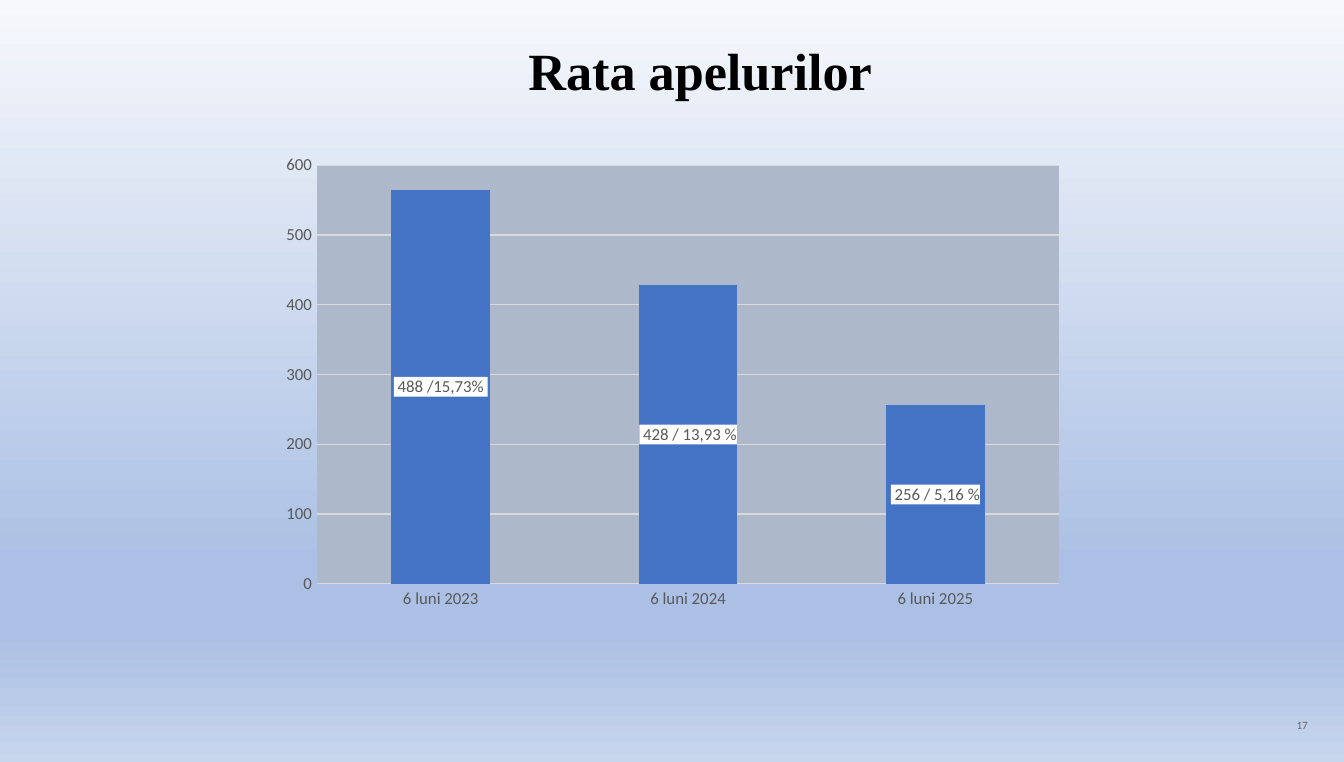
from dataclasses import dataclass

from lxml.etree import SubElement
from pptx import Presentation
from pptx.chart.data import CategoryChartData
from pptx.dml.color import RGBColor
from pptx.enum.chart import XL_CHART_TYPE as ChartType
from pptx.enum.chart import XL_LABEL_POSITION as LabelPosition
from pptx.enum.chart import XL_TICK_MARK as TickMark
from pptx.enum.text import MSO_ANCHOR as Anchor
from pptx.enum.text import PP_ALIGN as Align
from pptx.oxml import parse_xml
from pptx.oxml.ns import nsdecls, qn
from pptx.util import Inches, Pt

GRAY = "595959"
GRADIENT = [(0, "F6F8FC"), (74, "ABC0E4"), (83, "ABC0E4"), (100, "C7D5ED")]


@dataclass
class TextItem:
    text: str
    box: tuple[float, float, float, float]
    font_name: str
    size: float
    color: str
    align: Align
    anchor: Anchor
    bold: bool = False


@dataclass
class Period:
    name: str
    calls: int
    label: str


TEXTS = [
    TextItem("17", (7.5, 5.3, 2.33, 0.2), "Calibri", 6, "6C6463", Align.RIGHT, Anchor.MIDDLE),
    TextItem("Rata apelurilor", (0.96, 0.3, 8.5, 0.51), "Times New Roman", 28, "000000",
             Align.CENTER, Anchor.BOTTOM, True),
]
PERIODS = [
    Period("6 luni 2023", 565, " 488 /15,73% "),
    Period("6 luni 2024", 428, " 428 / 13,93 %"),
    Period("6 luni 2025", 256, " 256 / 5,16 %"),
]


def rgb(value: str) -> RGBColor:
    return RGBColor.from_string(value)


def style_font(font, name: str, size: float, color: str, bold: bool = False) -> None:
    font.name, font.size, font.bold = name, Pt(size), bold
    font.color.rgb = rgb(color)


def solid_properties(color: str):
    return parse_xml(
        f'<c:spPr {nsdecls("c", "a")}><a:solidFill><a:srgbClr val="{color}"/></a:solidFill>'
        '<a:ln><a:noFill/></a:ln></c:spPr>'
    )


def paint_background(slide) -> None:
    fill = slide.background.fill
    fill.gradient()
    fill.gradient_angle = 270
    stops = slide.element.find(".//" + qn("a:gsLst"))
    for stop in list(stops):
        stops.remove(stop)
    for position, color in GRADIENT:
        stop = SubElement(stops, qn("a:gs"), pos=str(position * 1000))
        SubElement(stop, qn("a:srgbClr"), val=color)


def add_text(slide, item: TextItem) -> None:
    shape = slide.shapes.add_textbox(*map(Inches, item.box))
    frame = shape.text_frame
    frame.word_wrap = True
    frame.vertical_anchor = item.anchor
    paragraph = frame.paragraphs[0]
    paragraph.text = item.text
    paragraph.alignment = item.align
    paragraph.line_spacing = 0.9
    style_font(paragraph.font, item.font_name, item.size, item.color, item.bold)


def style_axis(axis) -> None:
    axis.major_tick_mark = axis.minor_tick_mark = TickMark.NONE
    axis.format.line.fill.background()
    style_font(axis.tick_labels.font, "Calibri", 9, GRAY)


def style_plot_area(chart, color: str) -> None:
    area = chart.element.find(".//" + qn("c:plotArea"))
    for layout in area.findall(qn("c:layout")):
        area.remove(layout)
    area.insert(0, parse_xml(
        f'<c:layout {nsdecls("c")}><c:manualLayout><c:layoutTarget val="inner"/>'
        '<c:xMode val="edge"/><c:yMode val="edge"/><c:x val="0.06"/><c:y val="0.04"/>'
        '<c:w val="0.92"/><c:h val="0.89"/></c:manualLayout></c:layout>'
    ))
    area.append(solid_properties(color))


def label_point(series, index: int, text: str) -> None:
    label = series.points[index].data_label
    frame = label.text_frame
    frame.word_wrap = False
    paragraph = frame.paragraphs[0]
    paragraph.add_run().text = text
    style_font(paragraph.font, "Calibri", 9, GRAY)
    label.position = LabelPosition.CENTER
    labels = series.data_labels
    element = labels._element.findall(qn("c:dLbl"))[index]
    element.find(qn("c:tx")).addnext(solid_properties("FFFFFF"))


def add_calls_chart(slide) -> None:
    data = CategoryChartData()
    data.categories = [period.name for period in PERIODS]
    data.add_series("Series 1", [period.calls for period in PERIODS])
    box = map(Inches, (2, 1.09, 6, 3.5))
    chart = slide.shapes.add_chart(ChartType.COLUMN_STACKED, *box, data).chart
    chart.has_title = chart.has_legend = False
    style_font(chart.font, "Calibri", 10, "000000")
    plot = chart.plots[0]
    plot.gap_width, plot.overlap, plot.vary_by_categories = 150, 100, False
    style_axis(chart.category_axis)
    axis = chart.value_axis
    style_axis(axis)
    axis.minimum_scale, axis.maximum_scale, axis.major_unit = 0, 600, 100
    grid = axis.major_gridlines.format.line
    grid.width = Pt(0.75)
    grid.color.rgb = rgb("D9D9D9")
    style_plot_area(chart, "ADB9CA")
    series = plot.series[0]
    series.format.fill.solid()
    series.format.fill.fore_color.rgb = rgb("4472C4")
    style_font(series.data_labels.font, "Calibri", 9, GRAY)
    series.data_labels.show_value = True
    series.data_labels.show_category_name = True
    for index, period in enumerate(PERIODS):
        label_point(series, index, period.label)


def main() -> None:
    """Build the call rate slide with its column chart."""
    presentation = Presentation()
    presentation.slide_width, presentation.slide_height = Inches(10), Inches(5.67)
    slide = presentation.slides.add_slide(presentation.slide_layouts[6])
    paint_background(slide)
    for item in TEXTS:
        add_text(slide, item)
    add_calls_chart(slide)
    presentation.save("out.pptx")


if __name__ == "__main__":
    main()
